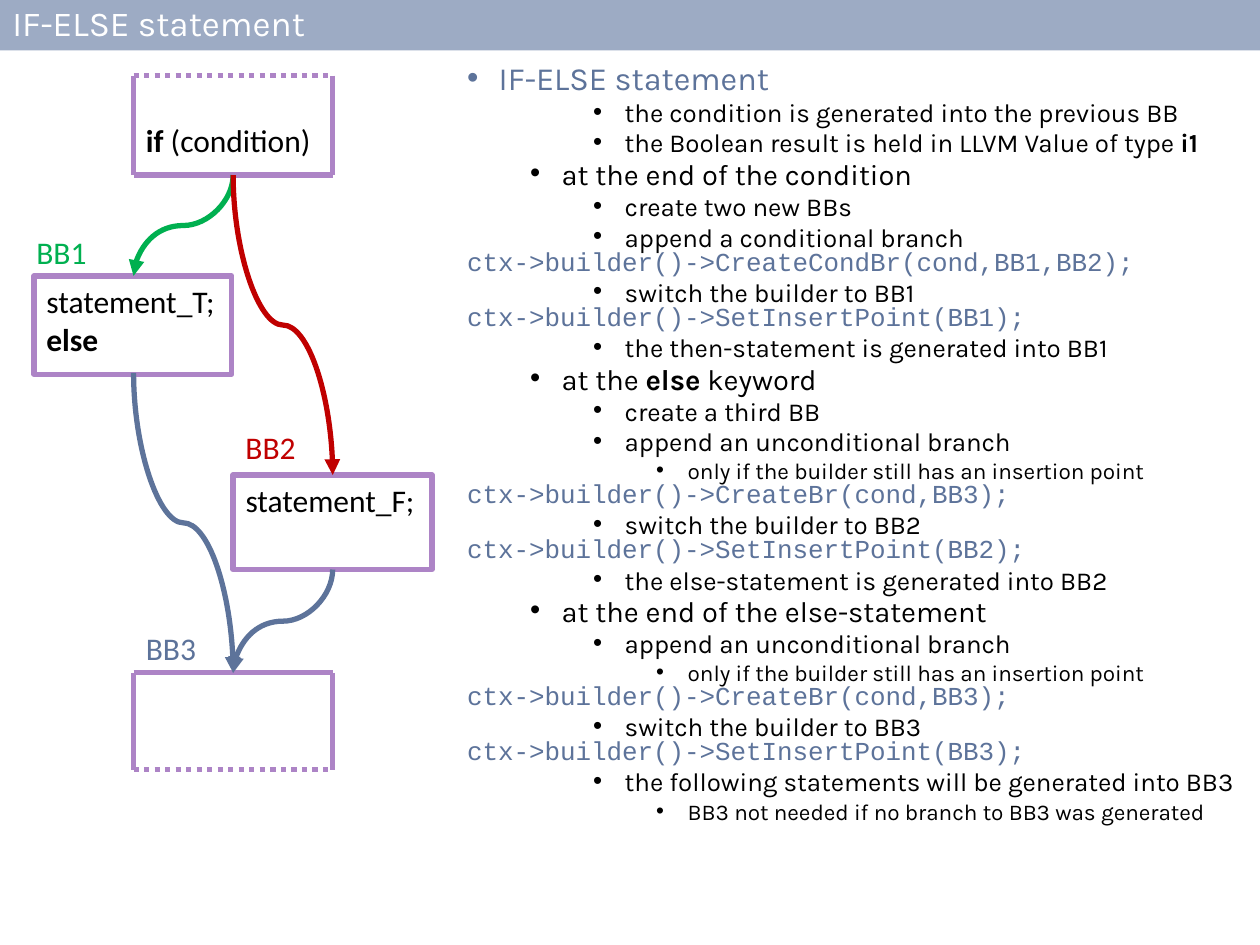
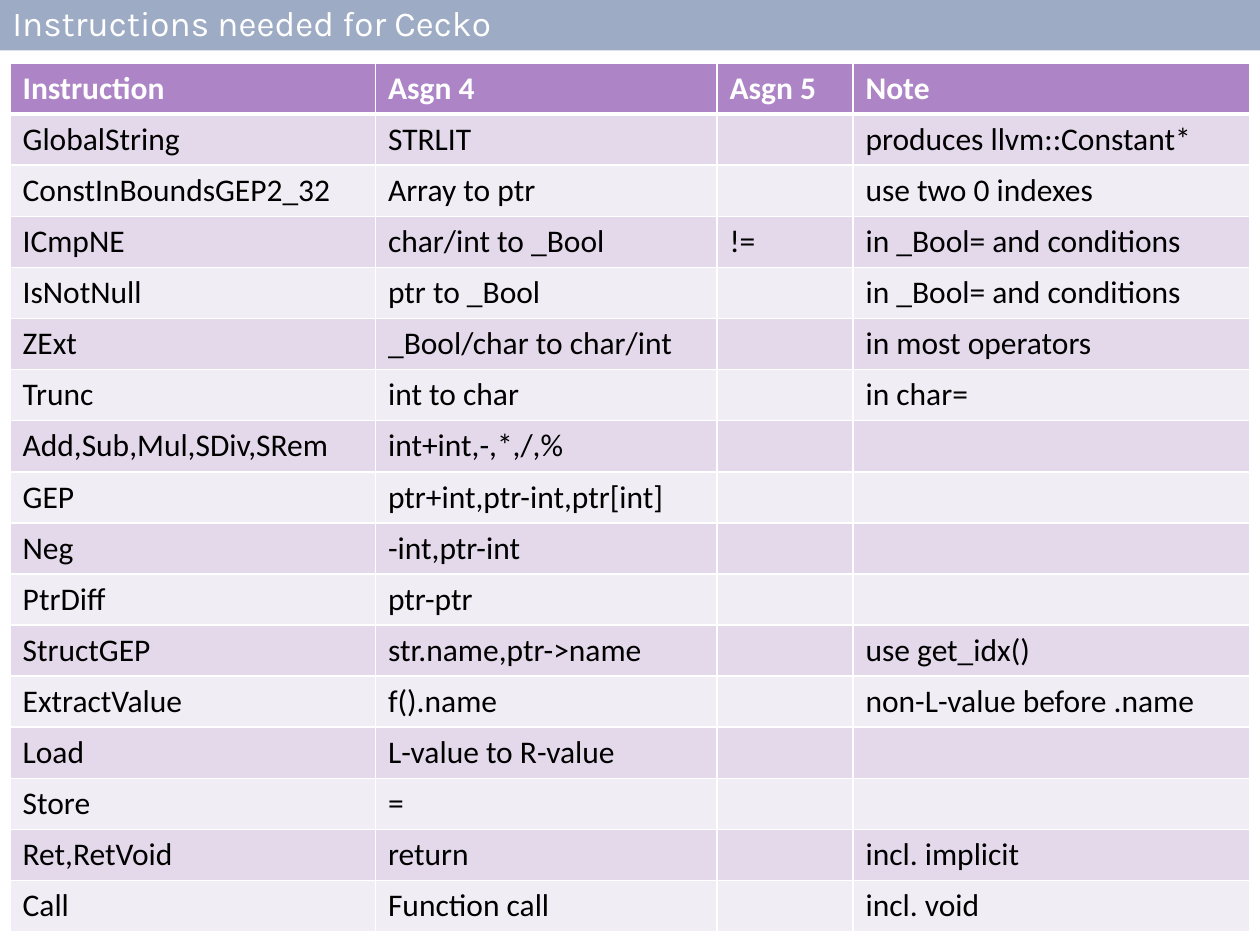
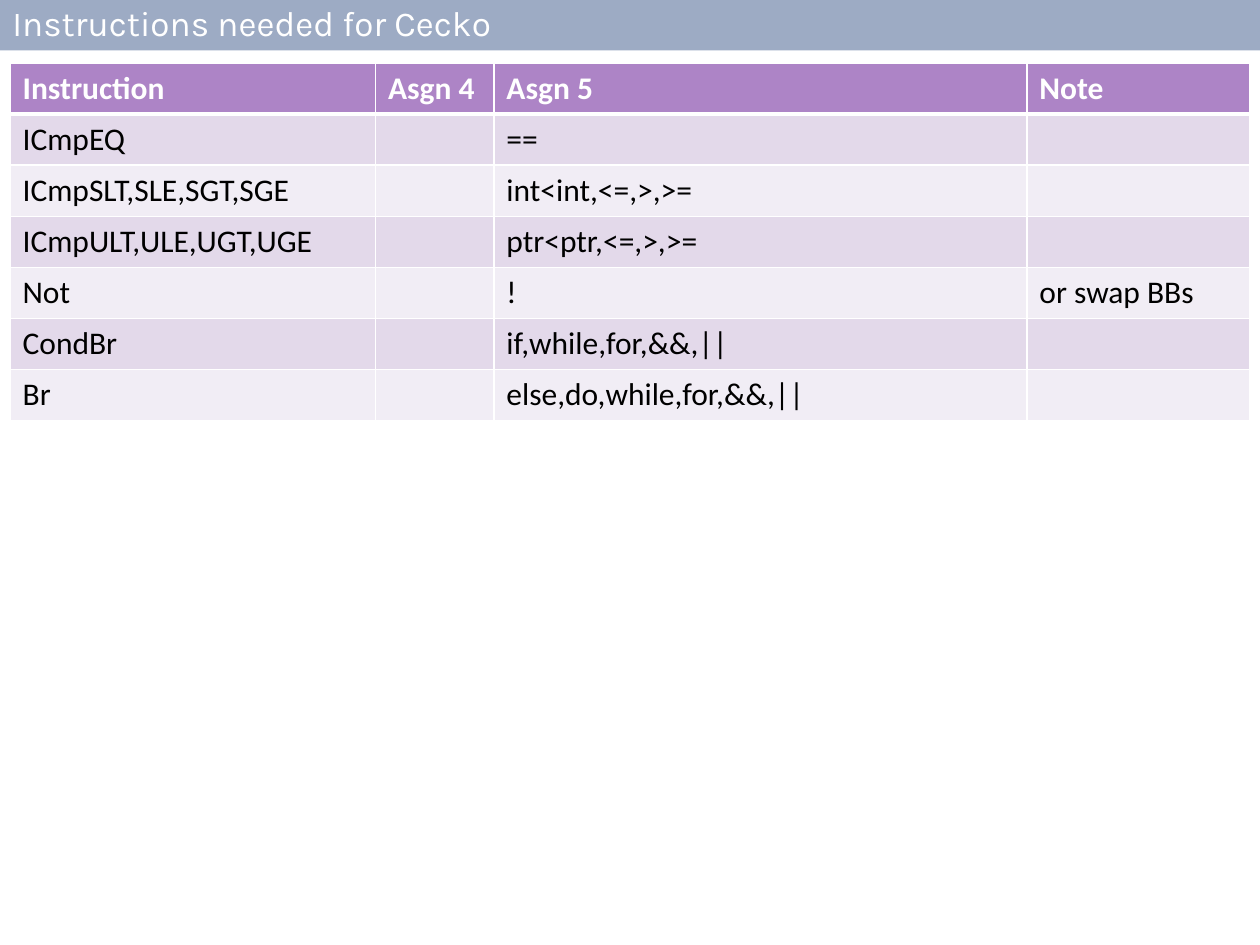
"""Build three slides on generating code for IF-ELSE and the instructions needed."""
from typing import NamedTuple

from lxml import etree
from pptx import Presentation
from pptx.dml.color import RGBColor
from pptx.enum.dml import MSO_LINE
from pptx.enum.shapes import MSO_CONNECTOR, MSO_SHAPE
from pptx.enum.text import MSO_ANCHOR, PP_ALIGN
from pptx.oxml.ns import qn
from pptx.util import Inches, Pt

RECTANGLE = MSO_SHAPE.RECTANGLE
STRAIGHT, CURVE = MSO_CONNECTOR.STRAIGHT, MSO_CONNECTOR.CURVE
TOP, MIDDLE, BOTTOM = MSO_ANCHOR.TOP, MSO_ANCHOR.MIDDLE, MSO_ANCHOR.BOTTOM
LEFT_ALIGNED = PP_ALIGN.LEFT
SOLID, DOTTED = MSO_LINE.SOLID, MSO_LINE.ROUND_DOT

WHITE, BLACK = "FFFFFF", "000000"
BAND, SLATE, PURPLE = "9DABC4", "5D739A", "AD84C6"
GREEN, RED = "00B050", "C00000"
ROW_FILLS = ("E3D9EA", "F1EDF5")
SANS, HEADING, CODE = "Calibri", "Karla", "Courier New"
CODE_LEVEL = 4
LEFT_X, CENTRE_X, RIGHT_X = 1.06, 1.85, 2.64


class OutlineStyle(NamedTuple):
    """Format of one level of the outline."""
    size: float
    color: str = BLACK
    font: str = HEADING
    line_spacing: float = 0.7
    space_before: float = 5


class Block(NamedTuple):
    """A closed basic block with its statements."""
    left: float
    top: float
    width: float
    height: float
    statements: tuple[str, ...]


class Branch(NamedTuple):
    """A jump from the bottom of one block to the top of another."""
    start_x: float
    start_y: float
    end_x: float
    end_y: float
    color: str


class Label(NamedTuple):
    """The name of a basic block."""
    left: float
    top: float
    text: str
    color: str


class Listing(NamedTuple):
    """A table of instructions."""
    height: float
    widths: tuple[float, ...]
    rows: tuple[tuple[str, ...], ...]


OUTLINE_STYLES = (
    OutlineStyle(18.5, SLATE, space_before=10),
    OutlineStyle(16.6),
    OutlineStyle(14.8),
    OutlineStyle(12.9),
    OutlineStyle(14.8, SLATE, CODE, 0.8, 0),
)
OUTLINE = (
    (0, "IF-ELSE statement"),
    (2, "the condition is generated into the previous BB"),
    (2, "the Boolean result is held in LLVM Value of type **i1**"),
    (1, "at the end of the condition"),
    (2, "create two new BBs"),
    (2, "append a conditional branch"),
    (4, "ctx->builder()->CreateCondBr(cond,BB1,BB2);"),
    (2, "switch the builder to BB1"),
    (4, "ctx->builder()->SetInsertPoint(BB1);"),
    (2, "the then-statement is generated into BB1"),
    (1, "at the **else** keyword"),
    (2, "create a third BB"),
    (2, "append an unconditional branch"),
    (3, "only if the builder still has an insertion point"),
    (4, "ctx->builder()->CreateBr(cond,BB3);"),
    (2, "switch the builder to BB2"),
    (4, "ctx->builder()->SetInsertPoint(BB2);"),
    (2, "the else-statement is generated into BB2"),
    (1, "at the end of the else-statement"),
    (2, "append an unconditional branch"),
    (3, "only if the builder still has an insertion point"),
    (4, "ctx->builder()->CreateBr(cond,BB3);"),
    (2, "switch the builder to BB3"),
    (4, "ctx->builder()->SetInsertPoint(BB3);"),
    (2, "the following statements will be generated into BB3"),
    (3, "BB3 not needed if no branch to BB3 was generated"),
)
BLOCKS = (
    Block(0.27, 2.19, 1.57, 0.78, ("statement_T;", "**else**")),
    Block(1.85, 3.77, 1.58, 0.75, ("statement_F;",)),
)
BRANCHES = (
    Branch(CENTRE_X, 1.39, LEFT_X, 2.19, GREEN),
    Branch(CENTRE_X, 1.39, RIGHT_X, 3.77, RED),
    Branch(LEFT_X, 2.96, CENTRE_X, 5.34, SLATE),
    Branch(RIGHT_X, 4.52, CENTRE_X, 5.34, SLATE),
)
LABELS = (
    Label(0.19, 1.8, "BB1", GREEN),
    Label(1.85, 3.35, "BB2", RED),
    Label(1.06, 4.94, "BB3", SLATE),
)
HEADER = ("Instruction", "Asgn 4", "Asgn 5", "Note")
LISTINGS = (
    Listing(6.89, (2.9, 2.71, 1.08, 3.15), (
        ("GlobalString", "STRLIT", "", "produces llvm::Constant*"),
        ("ConstInBoundsGEP2_32", "Array to ptr", "", "use two 0 indexes"),
        ("ICmpNE", "char/int to _Bool", "!=", "in _Bool= and conditions"),
        ("IsNotNull", "ptr to _Bool", "", "in _Bool= and conditions"),
        ("ZExt", "_Bool/char to char/int", "", "in most operators"),
        ("Trunc", "int to char", "", "in char="),
        ("Add,Sub,Mul,SDiv,SRem", "int+int,-,*,/,%", "", ""),
        ("GEP", "ptr+int,ptr-int,ptr[int]", "", ""),
        ("Neg", "-int,ptr-int", "", ""),
        ("PtrDiff", "ptr-ptr", "", ""),
        ("StructGEP", "str.name,ptr->name", "", "use get_idx()"),
        ("ExtractValue", "f().name", "", "non-L-value before .name"),
        ("Load", "L-value to R-value", "", ""),
        ("Store", "=", "", ""),
        ("Ret,RetVoid", "return", "", "incl. implicit"),
        ("Call", "Function call", "", "incl. void"),
    )),
    Listing(2.84, (2.9, 0.94, 4.23, 1.77), (
        ("ICmpEQ", "", "==", ""),
        ("ICmpSLT,SLE,SGT,SGE", "", "int<int,<=,>,>=", ""),
        ("ICmpULT,ULE,UGT,UGE", "", "ptr<ptr,<=,>,>=", ""),
        ("Not", "", "!", "or swap BBs"),
        ("CondBr", "", "if,while,for,&&,||", ""),
        ("Br", "", "else,do,while,for,&&,||", ""),
    )),
)


def rgb(color: str) -> RGBColor:
    """Turn a hex string into a colour."""
    return RGBColor.from_string(color)


def write(paragraph, text: str, *, size: float = 18, font: str = SANS,
          color: str = BLACK, bold: bool = False) -> None:
    """Write text into a paragraph; parts between double asterisks are bold."""
    paragraph.alignment = LEFT_ALIGNED
    for index, part in enumerate(text.split("**")):
        if part:
            run = paragraph.add_run()
            run.text = part
            run.font.size = Pt(size)
            run.font.name = font
            run.font.bold = bold or index % 2 == 1
            run.font.color.rgb = rgb(color)


def next_paragraph(frame, index: int):
    """Return the first paragraph, or a new one after it."""
    return frame.add_paragraph() if index else frame.paragraphs[0]


def add_frame(slide, left: float, top: float, width: float, height: float, wrap: bool = True):
    """Add a text box and return its text frame."""
    area = Inches(left), Inches(top), Inches(width), Inches(height)
    frame = slide.shapes.add_textbox(*area).text_frame
    frame.word_wrap = wrap
    return frame


def add_rectangle(slide, left: float, top: float, width: float, height: float):
    """Add a rectangle without shadow, fill and line."""
    area = Inches(left), Inches(top), Inches(width), Inches(height)
    rectangle = slide.shapes.add_shape(RECTANGLE, *area)
    rectangle.shadow.inherit = False
    rectangle.fill.background()
    rectangle.line.fill.background()
    return rectangle


def add_line(slide, kind, start: tuple[float, float], end: tuple[float, float],
             color: str, dash=SOLID):
    """Add a connector without shadow."""
    points = [Inches(value) for value in (*start, *end)]
    connector = slide.shapes.add_connector(kind, *points)
    connector.line.color.rgb = rgb(color)
    connector.line.width = Pt(3)
    connector.line.dash_style = dash
    etree.SubElement(connector._element.spPr, qn("a:effectLst"))
    return connector


def add_titled_slide(presentation, title: str):
    """Add a blank slide with the title band."""
    slide = presentation.slides.add_slide(presentation.slide_layouts[6])
    band = add_rectangle(slide, 0, 0, 10, 0.4)
    band.fill.solid()
    band.fill.fore_color.rgb = rgb(BAND)
    band.text_frame.vertical_anchor = MIDDLE
    heading = band.text_frame.paragraphs[0]
    heading.line_spacing = 0.9
    write(heading, title, size=20, font=HEADING, color=WHITE)
    return slide


def add_outline(slide) -> None:
    """Add the outline with its bullets and code lines."""
    frame = add_frame(slide, 3.61, 0.5, 6.31, 6.5)
    for index, (level, text) in enumerate(OUTLINE):
        style = OUTLINE_STYLES[level]
        paragraph = next_paragraph(frame, index)
        paragraph.level = level
        paragraph.line_spacing = style.line_spacing
        paragraph.space_before = Pt(style.space_before)
        write(paragraph, text, size=style.size, font=style.font, color=style.color)
        is_code = level == CODE_LEVEL
        properties = paragraph._p.get_or_add_pPr()
        properties.set("marL", str(0 if is_code else Inches(0.25 + 0.5 * level)))
        properties.set("indent", str(0 if is_code else Inches(-0.25)))
        if not is_code:
            etree.SubElement(properties, qn("a:buFont"), typeface="Arial")
            etree.SubElement(properties, qn("a:buChar"), char="•")


def add_block(slide, block: Block) -> None:
    """Add a closed basic block."""
    box = add_rectangle(slide, block.left, block.top, block.width, block.height)
    box.line.color.rgb = rgb(PURPLE)
    box.line.width = Pt(3)
    box.text_frame.vertical_anchor = TOP
    for index, statement in enumerate(block.statements):
        write(next_paragraph(box.text_frame, index), statement)


def add_open_block(slide, top: float, bottom: float, top_dash, bottom_dash) -> None:
    """Add a basic block that continues beyond its dotted side."""
    for x in (LEFT_X, RIGHT_X):
        add_line(slide, STRAIGHT, (x, top), (x, bottom), PURPLE)
    for y, dash in ((top, top_dash), (bottom, bottom_dash)):
        add_line(slide, STRAIGHT, (LEFT_X, y), (RIGHT_X, y), PURPLE, dash)


def add_branch(slide, branch: Branch) -> None:
    """Add a curved arrow that leaves and arrives vertically."""
    middle_x = (branch.start_x + branch.end_x) / 2
    middle_y = (branch.start_y + branch.end_y) / 2
    turn = 1 if branch.end_x < branch.start_x else -1
    reach = turn * (branch.end_y - branch.start_y) / 2
    rise = abs(branch.end_x - branch.start_x) / 2
    arrow = add_line(slide, CURVE, (middle_x - reach, middle_y - rise),
                     (middle_x + reach, middle_y + rise), branch.color)
    arrow._element.spPr.xfrm.rot = 90 * turn % 360
    etree.SubElement(arrow.line._get_or_add_ln(), qn("a:tailEnd"), type="triangle")


def add_flow(slide) -> None:
    """Add the control flow of the IF-ELSE statement."""
    for block in BLOCKS:
        add_block(slide, block)
    condition = add_frame(slide, LEFT_X, 0.6, 1.58, 0.79)
    condition.vertical_anchor = BOTTOM
    condition.margin_bottom = Inches(0.13)
    write(condition.paragraphs[0], "**if** (condition)")
    add_open_block(slide, 0.6, 1.39, DOTTED, SOLID)
    add_open_block(slide, 5.34, 6.11, SOLID, DOTTED)
    for branch in BRANCHES:
        add_branch(slide, branch)
    for label in LABELS:
        frame = add_frame(slide, label.left, label.top, 0.6, 0.4, wrap=False)
        write(frame.paragraphs[0], label.text, color=label.color)


def format_cell(cell, fill: str, bottom_width: float) -> None:
    """Set the borders and the fill of a cell."""
    properties = cell._tc.get_or_add_tcPr()
    for side, width in (("L", 1), ("R", 1), ("T", 1), ("B", bottom_width)):
        border = etree.SubElement(properties, qn(f"a:ln{side}"), w=str(Pt(width)))
        paint = etree.SubElement(border, qn("a:solidFill"))
        etree.SubElement(paint, qn("a:srgbClr"), val=WHITE)
    cell.fill.solid()
    cell.fill.fore_color.rgb = rgb(fill)


def add_listing(slide, listing: Listing) -> None:
    """Add a table of instructions under the common header."""
    rows = (HEADER, *listing.rows)
    area = Inches(0.08), Inches(0.5), Inches(sum(listing.widths)), Inches(listing.height)
    table = slide.shapes.add_table(len(rows), len(HEADER), *area).table
    table.first_row = table.horz_banding = False
    for column, width in zip(table.columns, listing.widths):
        column.width = Inches(width)
    for row_index, texts in enumerate(rows):
        is_header = row_index == 0
        fill = PURPLE if is_header else ROW_FILLS[(row_index - 1) % 2]
        for column_index, text in enumerate(texts):
            cell = table.cell(row_index, column_index)
            format_cell(cell, fill, 3 if is_header else 1)
            write(cell.text_frame.paragraphs[0], text,
                  color=WHITE if is_header else BLACK, bold=is_header)


def main() -> None:
    """Build and save the presentation."""
    presentation = Presentation()
    presentation.slide_width = Inches(10)
    presentation.slide_height = Inches(7.5)
    statement = add_titled_slide(presentation, "IF-ELSE statement")
    add_outline(statement)
    add_flow(statement)
    for listing in LISTINGS:
        add_listing(add_titled_slide(presentation, "Instructions needed for Cecko"), listing)
    presentation.save("out.pptx")


if __name__ == "__main__":
    main()
